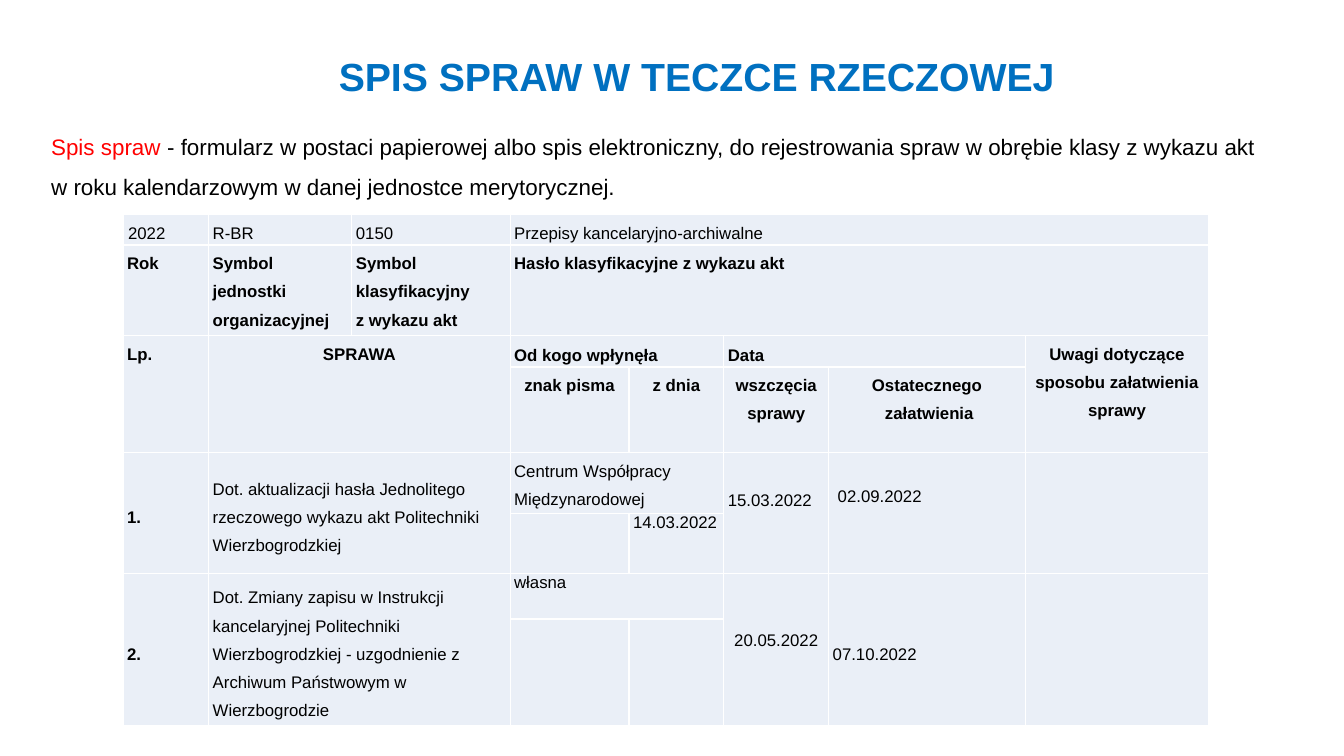
from pptx import Presentation
from pptx.dml.color import RGBColor as Rgb
from pptx.enum.text import MSO_ANCHOR as Anchor, MSO_AUTO_SIZE as Fit, PP_ALIGN as Align
from pptx.oxml import parse_xml
from pptx.oxml.ns import nsdecls
from pptx.util import Inches, Pt

COLORS = {"title": "0070C0", "term": "FF0000", "text": "000000",
          "cell": "EAEFF7", "border": "FFFFFF"}

COLUMNS = [0.85, 1.42, 1.57, 1.18, 0.94, 1.04, 1.95, 1.82]
ROWS = [0.3, 0.9, 0.31, 0.85, 0.47, 0.6, 0.45, 1.06]

# (first row, first column, rows spanned, columns spanned)
MERGES = [(0, 3, 1, 5), (1, 3, 1, 5), (2, 0, 2, 1), (2, 1, 2, 2), (2, 3, 1, 2),
          (2, 5, 1, 2), (2, 7, 2, 1)]
for case_row in (4, 6):
    MERGES += [(case_row, 0, 2, 1), (case_row, 1, 2, 2), (case_row, 3, 1, 2)]
    MERGES += [(case_row, column, 2, 1) for column in (5, 6, 7)]

BOLD = {"bold": True}
CENTERED = {"bold": True, "align": Align.CENTER}
MIDDLE = {"anchor": Anchor.MIDDLE}
BOLD_MIDDLE = BOLD | MIDDLE
SINGLE = {"spacing": 1.0}

# (row, column): (text, format)
CELLS = {
    (0, 0): ("2022", {"left": 0.05}),
    (0, 1): ("R-BR", {}),
    (0, 2): ("0150", {}),
    (0, 3): ("Przepisy kancelaryjno-archiwalne", {}),
    (1, 0): ("Rok", BOLD),
    (1, 1): ("Symbol jednostki organizacyjnej", BOLD),
    (1, 2): ("Symbol klasyfikacyjny z wykazu akt", BOLD | {"right": 0.32}),
    (1, 3): ("Hasło klasyfikacyjne z wykazu akt", BOLD),
    (2, 0): ("Lp.", BOLD),
    (2, 1): ("SPRAWA", CENTERED),
    (2, 3): ("Od kogo wpłynęła", BOLD_MIDDLE),
    (2, 5): ("Data", BOLD_MIDDLE),
    (2, 7): ("Uwagi dotyczące sposobu załatwienia sprawy", CENTERED),
    (3, 3): ("znak pisma", CENTERED),
    (3, 4): ("z dnia", CENTERED),
    (3, 5): ("wszczęcia sprawy", CENTERED),
    (3, 6): ("Ostatecznego\n załatwienia", CENTERED),
    (4, 0): ("1.", BOLD_MIDDLE),
    (4, 1): ("Dot. aktualizacji hasła Jednolitego rzeczowego wykazu akt "
             "Politechniki Wierzbogrodzkiej", MIDDLE),
    (4, 3): ("Centrum Współpracy Międzynarodowej", {}),
    (4, 5): ("15.03.2022", SINGLE | {"top": 0.38}),
    (4, 6): ("02.09.2022", MIDDLE | {"left": 0.09, "bottom": 0.43}),
    (5, 4): ("14.03.2022", SINGLE),
    (6, 0): ("2.", BOLD_MIDDLE),
    (6, 1): ("Dot. Zmiany zapisu w Instrukcji kancelaryjnej Politechniki "
             "Wierzbogrodzkiej - uzgodnienie z Archiwum Państwowym w "
             "Wierzbogrodzie", MIDDLE),
    (6, 3): ("własna", SINGLE),
    (6, 5): ("20.05.2022", SINGLE | {"align": Align.CENTER, "top": 0.57}),
    (6, 6): ("07.10.2022", MIDDLE),
}


class SlideBuilder:
    def __init__(self, deck, font="Arial"):
        self.font = font
        self.slide = deck.slides.add_slide(deck.slide_layouts[5])

    def style_font(self, font, size, color, bold=False):
        values = {"name": self.font, "size": Pt(size), "bold": bold}
        for name, value in values.items():
            setattr(font, name, value)
        font.color.rgb = Rgb.from_string(COLORS[color])

    def fill_para(self, para, spans, size, bold=False, align=Align.LEFT, spacing=1.5):
        """Format a paragraph and add its (text, colour) spans."""
        for name, value in {"alignment": align, "line_spacing": spacing}.items():
            setattr(para, name, value)
        for text, color in spans:
            span = para.add_run()
            span.text = text
            self.style_font(span.font, size, color, bold)

    def title(self, text, left, top, width, height):
        box = self.slide.shapes.title
        place = {"left": left, "top": top, "width": width, "height": height}
        for name, value in place.items():
            setattr(box, name, Inches(value))
        frame = box.text_frame
        values = {"word_wrap": False, "auto_size": Fit.SHAPE_TO_FIT_TEXT,
                  "vertical_anchor": Anchor.TOP}
        for name, value in values.items():
            setattr(frame, name, value)
        self.fill_para(frame.paragraphs[0], [(text, "title")], 28, bold=True)

    def text(self, spans, *place):
        frame = self.slide.shapes.add_textbox(*map(Inches, place)).text_frame
        frame.word_wrap = True
        frame.auto_size = Fit.SHAPE_TO_FIT_TEXT
        self.fill_para(frame.paragraphs[0], spans, 16, align=Align.JUSTIFY)

    def table(self, left, top):
        place = map(Inches, (left, top, sum(COLUMNS), sum(ROWS)))
        table = self.slide.shapes.add_table(len(ROWS), len(COLUMNS), *place).table
        table.first_row = table.horz_banding = False
        for column, width in zip(table.columns, COLUMNS):
            column.width = Inches(width)
        for row, height in zip(table.rows, ROWS):
            row.height = Inches(height)
        for row, column, height, width in MERGES:
            last = table.cell(row + height - 1, column + width - 1)
            table.cell(row, column).merge(last)
        for row in range(len(ROWS)):
            for column in range(len(COLUMNS)):
                text, style = CELLS.get((row, column), ("", {}))
                self.cell(table.cell(row, column), text, **style)

    def cell(self, cell, text, left=0.04, right=0.04, top=0, bottom=0,
             anchor=Anchor.TOP, **style):
        values = {"margin_left": Inches(left), "margin_right": Inches(right),
                  "margin_top": Inches(top), "margin_bottom": Inches(bottom),
                  "vertical_anchor": anchor}
        for name, value in values.items():
            setattr(cell, name, value)
        self.cell_borders(cell)
        cell.fill.solid()
        cell.fill.fore_color.rgb = Rgb.from_string(COLORS["cell"])
        frame = cell.text_frame
        for index, line in enumerate(text.split("\n")):
            para = frame.add_paragraph() if index else frame.paragraphs[0]
            if line:
                self.fill_para(para, [(line, "text")], 12, **style)
            else:
                self.style_font(para.font, 12, "text")

    def cell_borders(self, cell):
        properties = cell._tc.get_or_add_tcPr()
        for side in "LRTB":
            properties.append(parse_xml(
                f'<a:ln{side} {nsdecls("a")} w="{Pt(1)}"><a:solidFill>'
                f'<a:srgbClr val="{COLORS["border"]}"/></a:solidFill></a:ln{side}>'))


def main():
    deck = Presentation()
    deck.slide_width, deck.slide_height = Inches(13.33), Inches(7.5)
    page = SlideBuilder(deck)
    page.table(1.22, 2.13)
    page.text([("Spis spraw ", "term"),
               ("- formularz w postaci papierowej albo spis elektroniczny, do "
                "rejestrowania spraw w obrębie klasy z wykazu akt w roku "
                "kalendarzowym w danej jednostce merytorycznej.", "text")],
              0.41, 1.14, 12.14, 0.91)
    page.title("SPIS SPRAW W TECZCE RZECZOWEJ", 3.26, 0.24, 7.37, 0.81)
    deck.save("out.pptx")


if __name__ == "__main__":
    main()
